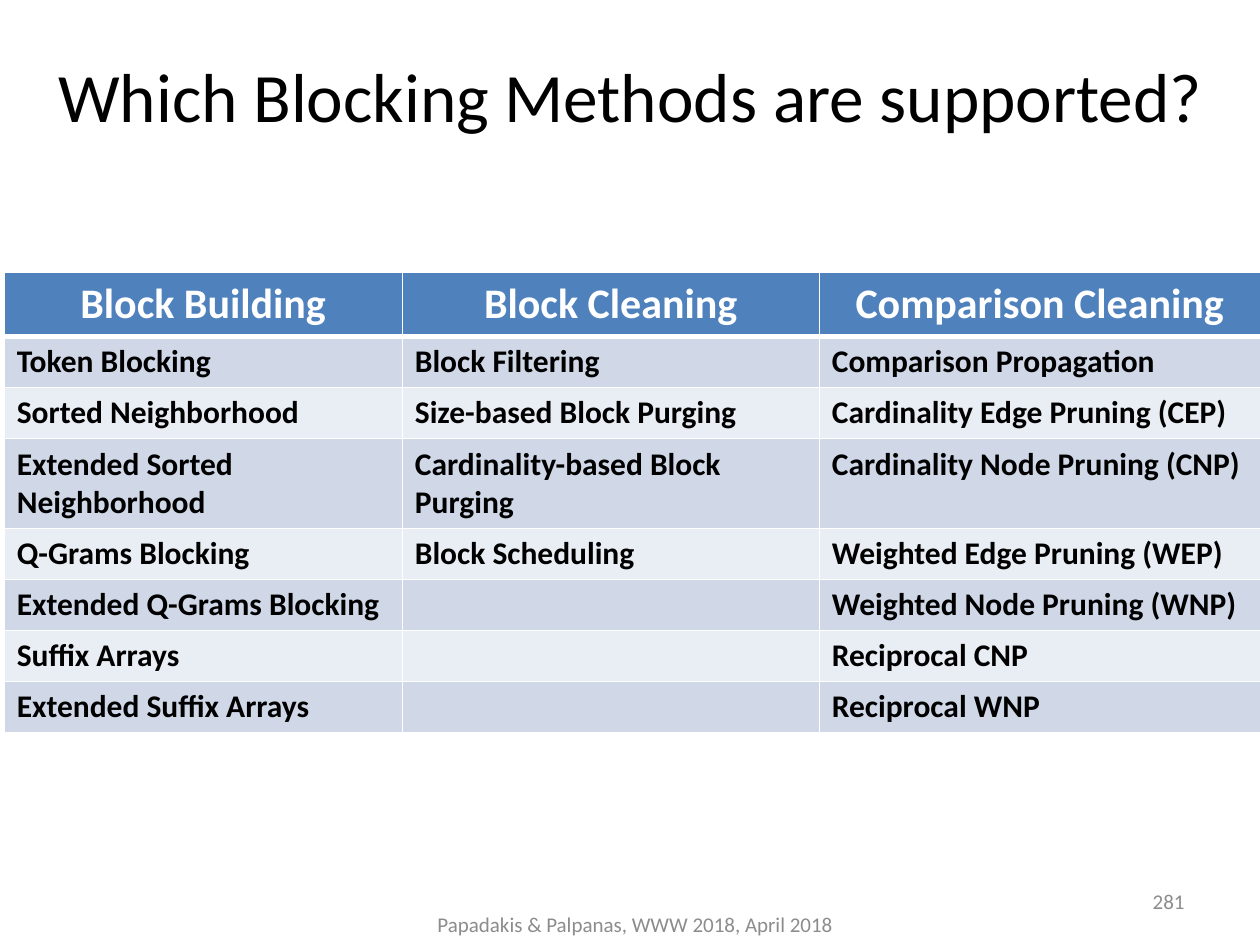
from lxml.etree import SubElement
from pptx import Presentation
from pptx.dml.color import RGBColor
from pptx.enum.text import MSO_ANCHOR, PP_ALIGN
from pptx.oxml.ns import qn
from pptx.util import Pt

TITLE = "Which Blocking Methods are supported?"
METHODS = {
    "Block Building": [
        "Token Blocking", "Sorted Neighborhood",
        "Extended Sorted Neighborhood", "Q-Grams Blocking",
        "Extended Q-Grams Blocking", "Suffix Arrays",
        "Extended Suffix Arrays"],
    "Block Cleaning": [
        "Block Filtering", "Size-based Block Purging",
        "Cardinality-based Block Purging", "Block Scheduling"],
    "Comparison Cleaning": [
        "Comparison Propagation", "Cardinality Edge Pruning (CEP)",
        "Cardinality Node Pruning (CNP)", "Weighted Edge Pruning (WEP)",
        "Weighted Node Pruning (WNP)", "Reciprocal CNP",
        "Reciprocal WNP"],
}
NOTES = [
    ("Papadakis & Palpanas, WWW 2018, April 2018",
     (235.5, 513.4, 255, 28.8), PP_ALIGN.CENTER),
    ("281", (516, 500.4, 168, 28.8), PP_ALIGN.RIGHT),
]

THEME = {
    "head_fill": "4F81BD",
    "bands": ("D0D8E8", "E9EDF4"),
    "rule": "FFFFFF",
    "title": {"size": 39.6, "color": "000000", "bold": False},
    "head": {"size": 24, "color": "FFFFFF", "bold": True},
    "body": {"size": 18, "color": "000000", "bold": True},
    "note": {"size": 12, "color": "8C8C8C", "bold": False},
}
FONT = "Calibri"
TITLE_BOX = (14.4, 9.4, 692, 90)
TABLE_AT = (2.4, 155.8)
WIDTHS = (227.5, 238.3, 252)
ROW = 29.2


def style(frame, kind, align):
    look = THEME[kind]
    para = frame.paragraphs[0]
    para.alignment = align
    values = {"name": FONT, "size": Pt(look["size"]), "bold": look["bold"]}
    for part in (para, *para.runs):
        for key, value in values.items():
            setattr(part.font, key, value)
        part.font.color.rgb = RGBColor.from_string(look["color"])


def fill_box(shape, text, kind, align):
    frame = shape.text_frame
    frame.text = text
    frame.word_wrap = True
    frame.vertical_anchor = MSO_ANCHOR.MIDDLE
    style(frame, kind, align)


def rule(cell, sides):
    """Draw cell borders; sides maps L, R, T, B to a width in points."""
    props = cell._tc.get_or_add_tcPr()
    for side, width in sides.items():
        line = SubElement(props, qn(f"a:ln{side}"), w=str(Pt(width)))
        paint = SubElement(line, qn("a:solidFill"))
        SubElement(paint, qn("a:srgbClr"), val=THEME["rule"])


def add_grid(slide):
    count = 1 + max(map(len, METHODS.values()))
    size = (sum(WIDTHS), ROW * count)
    table = slide.shapes.add_table(
        count, len(METHODS), *map(Pt, TABLE_AT + size)).table
    for row in table.rows:
        row.height = Pt(ROW)
    for col, (head, names) in enumerate(METHODS.items()):
        table.columns[col].width = Pt(WIDTHS[col])
        texts = [head, *names] + [""] * (count - 1 - len(names))
        for row, text in enumerate(texts):
            top = row == 0
            cell = table.cell(row, col)
            cell.text = text
            style(cell.text_frame, "head" if top else "body",
                  PP_ALIGN.CENTER if top else PP_ALIGN.LEFT)
            rule(cell, {"L": 1, "R": 1, "T": 3 if row == 1 else 1,
                        "B": 3 if top else 1})
            cell.fill.solid()
            color = THEME["head_fill"] if top else THEME["bands"][(row - 1) % 2]
            cell.fill.fore_color.rgb = RGBColor.from_string(color)


def main():
    deck = Presentation()
    deck.slide_width, deck.slide_height = Pt(720), Pt(540)
    slide = deck.slides.add_slide(deck.slide_layouts[5])
    title = slide.shapes.title
    for key, value in zip(("left", "top", "width", "height"), TITLE_BOX):
        setattr(title, key, Pt(value))
    fill_box(title, TITLE, "title", PP_ALIGN.CENTER)
    add_grid(slide)
    for text, box, align in NOTES:
        fill_box(slide.shapes.add_textbox(*map(Pt, box)), text, "note", align)
    deck.save("out.pptx")


if __name__ == "__main__":
    main()
